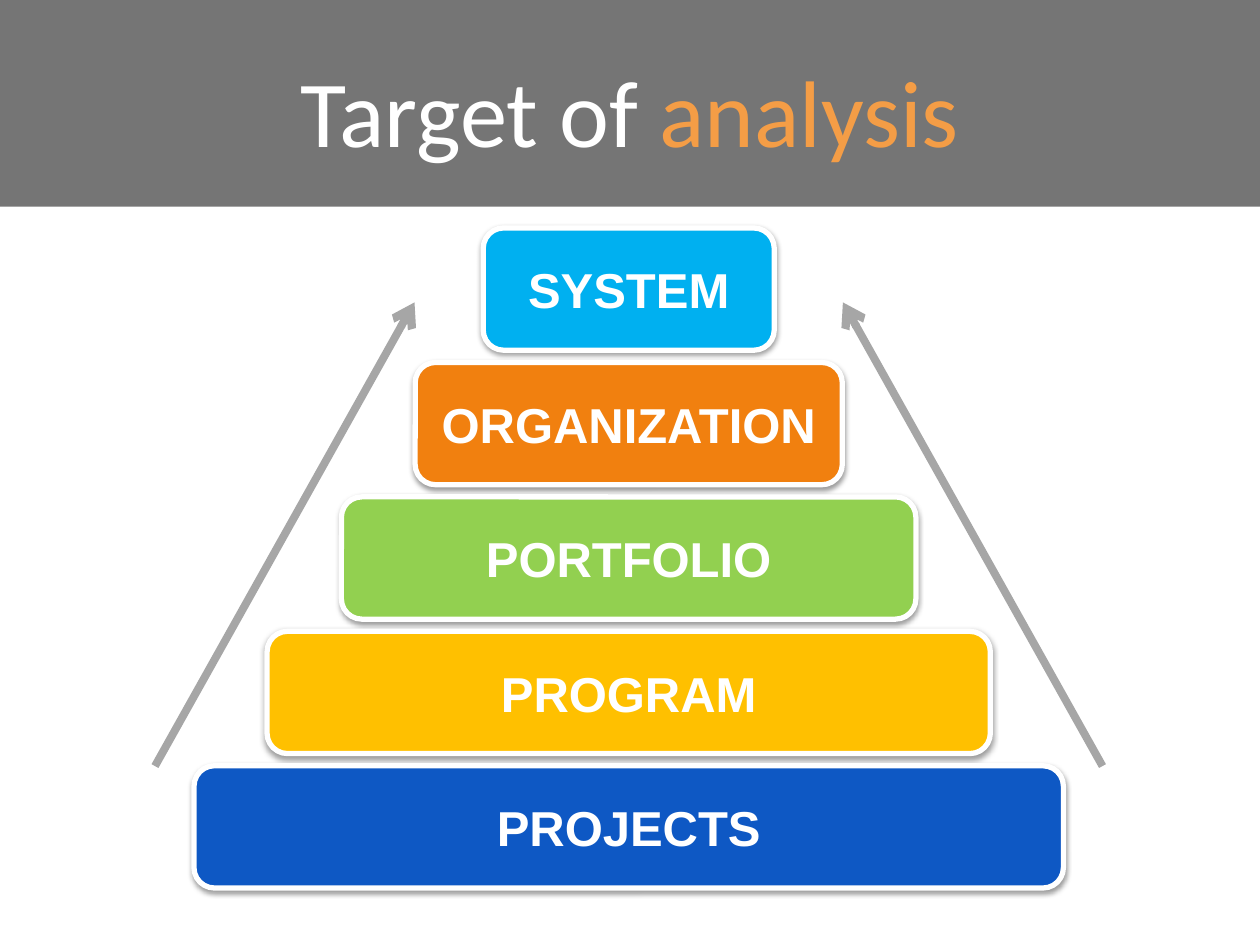
from lxml import etree
from pptx import Presentation
from pptx import util as u
from pptx.dml.color import RGBColor
from pptx.enum import shapes, text
from pptx.oxml import ns

WIDTH, HEIGHT = 10, 7.5
BAND_HEIGHT = 1.64
CENTER = WIDTH / 2 - 0.01
TIER_TOP, TIER_PITCH, TIER_HEIGHT = 1.81, 1.067, 0.97

COLORS = {
    "band": "666666",
    "white": "FFFFFF",
    "accent": "F49D46",
    "arrow": "A6A6A6",
    "shadow": "000000",
    "sky": "00B0F0",
    "orange": "F1800F",
    "green": "92D050",
    "yellow": "FFC000",
    "blue": "0E58C4",
}

TIERS = [
    ("SYSTEM", 2.31, "sky"),
    ("ORGANIZATION", 3.39, "orange"),
    ("PORTFOLIO", 4.56, "green"),
    ("PROGRAM", 5.74, "yellow"),
    ("PROJECTS", 6.9, "blue"),
]


def rgb(name):
    return RGBColor.from_string(COLORS[name])


def add_child(parent, tag, **attributes):
    return etree.SubElement(parent, ns.qn(tag), attributes)


def add_box(page, kind, left, top, width, height, fill):
    box = page.shapes.add_shape(kind, *map(u.Inches, (left, top, width, height)))
    box.shadow.inherit = False
    box.fill.solid()
    box.fill.fore_color.rgb = rgb(fill)
    box.line.fill.background()
    return box


def write(box, *pieces, font, size, bold=False):
    """Centre one line in the box; each piece is a (text, colour) pair."""
    frame = box.text_frame
    frame.word_wrap = True
    frame.vertical_anchor = text.MSO_ANCHOR.MIDDLE
    para = frame.paragraphs[0]
    para.alignment = text.PP_ALIGN.CENTER
    for words, color in pieces:
        span = para.add_run()
        span.text = words
        span.font.name = font
        span.font.size = u.Pt(size)
        span.font.bold = bold
        span.font.color.rgb = rgb(color)


def add_soft_shadow(box):
    effects = box._element.spPr.find(ns.qn("a:effectLst"))
    shadow = add_child(effects, "a:outerShdw", blurRad=str(u.Pt(3.1)),
                       dist=str(u.Pt(1.6)), dir="5400000", rotWithShape="0")
    color = add_child(shadow, "a:srgbClr", val=COLORS["shadow"])
    add_child(color, "a:alpha", val="38000")


def add_title_band(page):
    band = add_box(page, shapes.MSO_SHAPE.RECTANGLE, 0, 0, WIDTH, BAND_HEIGHT, "band")
    color = band._element.spPr.find(".//" + ns.qn("a:srgbClr"))
    add_child(color, "a:alpha", val="90000")
    band.text_frame.margin_top = u.Inches(0.15)
    write(band, ("Target of ", "white"), ("analysis", "accent"),
          font="Calibri", size=54)


def add_tier(page, row, label, width, fill):
    tier = add_box(page, shapes.MSO_SHAPE.ROUNDED_RECTANGLE, CENTER - width / 2,
                   TIER_TOP + row * TIER_PITCH, width, TIER_HEIGHT, fill)
    tier.line.color.rgb = rgb("white")
    tier.line.width = u.Pt(3)
    add_soft_shadow(tier)
    write(tier, (label, "white"), font="Arial", size=28, bold=True)


def add_arrow(page, start, end):
    arrow = page.shapes.add_connector(shapes.MSO_CONNECTOR.STRAIGHT,
                                      *map(u.Inches, (*start, *end)))
    arrow.line.color.rgb = rgb("arrow")
    arrow.line.width = u.Pt(4.5)
    add_child(arrow.line._get_or_add_ln(), "a:tailEnd", type="arrow")
    add_child(arrow._element.spPr, "a:effectLst")


def main():
    deck = Presentation()
    deck.slide_width, deck.slide_height = u.Inches(WIDTH), u.Inches(HEIGHT)
    page = deck.slides.add_slide(deck.slide_layouts[6])
    add_title_band(page)
    for row, tier in enumerate(TIERS):
        add_tier(page, row, *tier)
    for side in (-1, 1):
        add_arrow(page, (CENTER + side * 3.76, 6.08), (CENTER + side * 1.7, 2.4))
    deck.save("out.pptx")


if __name__ == "__main__":
    main()
